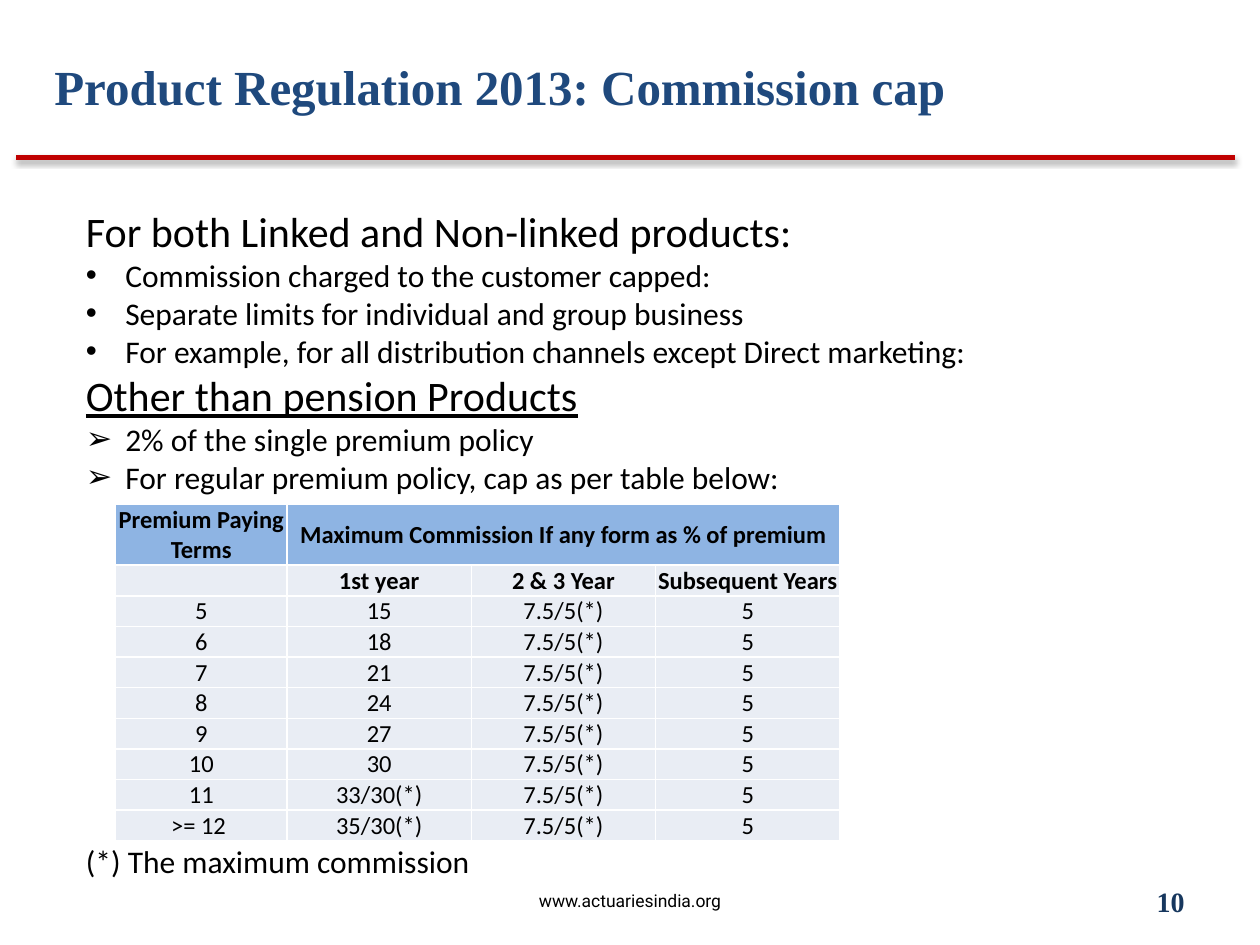
from lxml.etree import SubElement
from pptx import Presentation
from pptx.dml.color import RGBColor
from pptx.enum.shapes import MSO_CONNECTOR
from pptx.enum.text import MSO_ANCHOR as Anchor, PP_ALIGN as Align
from pptx.oxml.ns import qn
from pptx.util import Pt

COLORS = {
    "black": "000000", "white": "FFFFFF", "rule": "C00000", "title": "1F497D",
    "number": "17375E", "header": "8EB4E3", "body": "E9EDF4",
}


def rgb(name):
    return RGBColor.from_string(COLORS[name])


def add_xml(parent, tag, **attributes):
    return SubElement(parent, qn(tag), attributes)


class SlideBuilder:
    body_font = "Calibri"
    indent = 22.5
    cell_inset = 0.5

    def __init__(self, slide):
        self.slide = slide

    def style(self, paragraph, size, color="black", name=None, bold=False,
              underline=False, align=Align.LEFT):
        paragraph.alignment = align
        font = paragraph.font
        font.size, font.bold, font.underline = Pt(size), bold, underline
        font.name = name or self.body_font
        font.color.rgb = rgb(color)

    def text_frame(self, left, top, width, height, anchor=Anchor.TOP):
        box = self.slide.shapes.add_textbox(Pt(left), Pt(top), Pt(width), Pt(height))
        frame = box.text_frame
        frame.word_wrap = True
        frame.vertical_anchor = anchor
        return frame

    def label(self, text, place, anchor=Anchor.MIDDLE, top_inset=3.6, **style):
        frame = self.text_frame(*place, anchor)
        frame.margin_top = Pt(top_inset)
        frame.text = text
        self.style(frame.paragraphs[0], **style)

    def outline(self, items, place):
        """Write (text, size, bullet, underline, space before) items as paragraphs."""
        frame = self.text_frame(*place)
        for index, (text, size, bullet, underline, space) in enumerate(items):
            paragraph = frame.paragraphs[0] if index == 0 else frame.add_paragraph()
            paragraph.text = text
            if space:
                paragraph.space_before = Pt(space)
            if bullet:
                properties = paragraph._p.get_or_add_pPr()
                properties.set("marL", str(Pt(self.indent)))
                properties.set("indent", str(-Pt(self.indent)))
                add_xml(properties, "a:buFont", typeface="Arial")
                add_xml(properties, "a:buChar", char=bullet)
            self.style(paragraph, size, underline=underline)

    def shadowed_rule(self, left, right, y, width):
        line = self.slide.shapes.add_connector(
            MSO_CONNECTOR.STRAIGHT, Pt(left), Pt(y), Pt(right), Pt(y))
        line.line.color.rgb = rgb("rule")
        line.line.width = Pt(width)
        effects = add_xml(line._element.spPr, "a:effectLst")
        shadow = add_xml(effects, "a:outerShdw", blurRad=str(Pt(3.1)),
                         dist=str(Pt(1.6)), dir="5400000", rotWithShape="0")
        shade = add_xml(shadow, "a:srgbClr", val=COLORS["black"])
        add_xml(shade, "a:alpha", val="38000")

    def cell(self, cell, text, fill, bold, anchor):
        properties = cell._tc.get_or_add_tcPr()
        for side in ("a:lnL", "a:lnR", "a:lnT", "a:lnB"):
            border = add_xml(properties, side, w=str(Pt(1)))
            add_xml(add_xml(border, "a:solidFill"), "a:srgbClr", val=COLORS["white"])
        cell.fill.solid()
        cell.fill.fore_color.rgb = rgb(fill)
        cell.margin_left = cell.margin_right = cell.margin_top = Pt(self.cell_inset)
        cell.margin_bottom = 0
        cell.vertical_anchor = anchor
        cell.text = text
        paragraph = cell.text_frame.paragraphs[0]
        self.style(paragraph, 14, bold=bold, align=Align.CENTER)
        if not text:
            add_xml(paragraph._p, "a:endParaRPr", sz="1400")

    def table(self, rows, left, top, widths, row_height):
        """Draw a table with a double-height header whose last cells are merged."""
        heights = [2 * row_height] + [row_height] * (len(rows) - 1)
        table = self.slide.shapes.add_table(
            len(rows), len(widths), Pt(left), Pt(top),
            Pt(sum(widths)), Pt(sum(heights))).table
        table.first_row = table.horz_banding = False
        for column, width in zip(table.columns, widths):
            column.width = Pt(width)
        for row, height in zip(table.rows, heights):
            row.height = Pt(height)
        for i, row in enumerate(rows):
            for j, text in enumerate(row):
                self.cell(table.cell(i, j), text, "body" if i else "header", i < 2,
                          Anchor.MIDDLE if i == 0 and j else Anchor.BOTTOM)
        table.cell(0, 1).merge(table.cell(0, len(widths) - 1))


def main():
    presentation = Presentation()
    presentation.slide_width, presentation.slide_height = Pt(720), Pt(540)
    builder = SlideBuilder(presentation.slides.add_slide(presentation.slide_layouts[6]))

    builder.shadowed_rule(9.36, 705.6, 90, 3)
    builder.label("www.actuariesindia.org", (0, 500.4, 720, 28.8),
                  size=10, name="Roboto", align=Align.CENTER)
    builder.label("10", (516, 500.4, 168, 28.8), size=16, color="number",
                  name="Times New Roman", bold=True, align=Align.RIGHT)
    builder.label("Product Regulation 2013: Commission cap", (24, 24, 612, 60),
                  Anchor.TOP, top_inset=8, size=28, color="title",
                  name="Times New Roman", bold=True)

    table_gap = 198
    builder.outline([
        ("For both Linked and Non-linked products:", 24, None, False, 0),
        ("Commission charged to the customer capped:", 18, "•", False, 0),
        ("Separate limits for individual and group business", 18, "•", False, 0),
        ("For example, for all distribution channels except Direct marketing:",
         18, "•", False, 0),
        ("Other than pension Products", 24, None, True, 0),
        ("2% of the single premium policy", 18, "➢", False, 0),
        ("For regular premium policy, cap as per table below:", 18, "➢", False, 0),
        ("(*) The maximum commission", 18, None, False, table_gap),
    ], (42, 114, 630, 392.4))

    first_year = {
        "5": "15", "6": "18", "7": "21", "8": "24", "9": "27", "10": "30",
        "11": "33/30(*)", ">= 12 ": "35/30(*)",
    }
    rows = [
        ["Premium Paying Terms", "Maximum Commission If any form as % of premium", "", ""],
        ["", "1st year", "2 & 3 Year", "Subsequent Years"],
    ] + [[term, cap, "7.5/5(*)", "5"] for term, cap in first_year.items()]
    builder.table(rows, 66, 288, [98.1, 105.3, 105.3, 105.3], 17.5)

    presentation.save("out.pptx")


if __name__ == "__main__":
    main()
